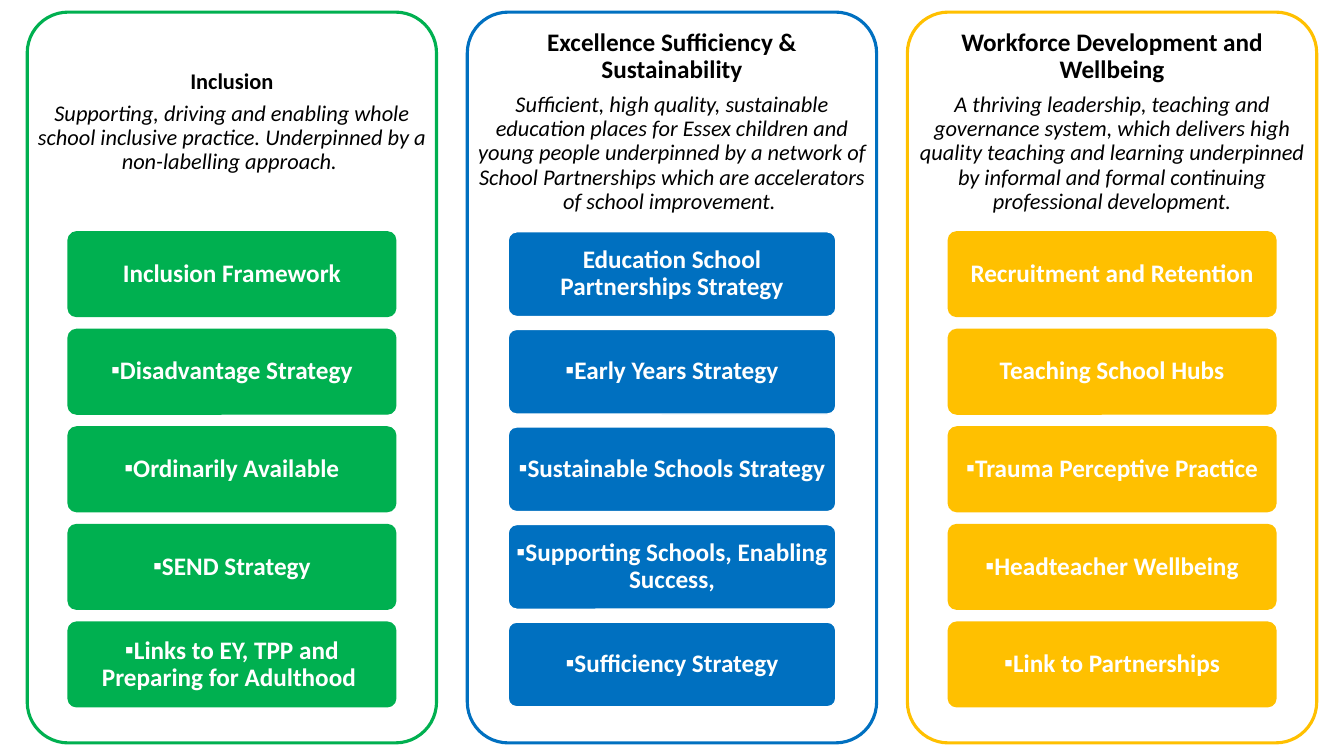
"""Builds a slide of three strategy pillars, each with a heading and five boxes."""
from pptx import Presentation
from pptx.util import Inches, Pt
from pptx.dml.color import RGBColor
from pptx.enum.shapes import MSO_SHAPE as Shape
from pptx.enum.text import MSO_ANCHOR as Anchor, PP_ALIGN as Align
from lxml.etree import SubElement
from pptx.oxml.ns import qn


def add_card(left, top, width, height, fill, line, weight):
    card = slide.shapes.add_shape(Shape.ROUNDED_RECTANGLE, Inches(left), Inches(top),
                                  Inches(width), Inches(height))
    card.adjustments[0] = 0.1
    card.shadow.inherit = False
    card.fill.solid()
    card.fill.fore_color.rgb = RGBColor.from_string(fill)
    card.line.color.rgb = RGBColor.from_string(line)
    card.line.width = Pt(weight)
    return card


def set_text(shape, lines, sizes, color, side, edge):
    frame = shape.text_frame
    frame.text = "\n".join(lines)
    frame.word_wrap = True
    frame.vertical_anchor = Anchor.MIDDLE
    frame.margin_left = frame.margin_right = Inches(side)
    frame.margin_top = frame.margin_bottom = Inches(edge)
    for row, (para, size) in enumerate(zip(frame.paragraphs, sizes)):
        para.alignment = Align.CENTER
        para.line_spacing = 0.9
        para.space_after = Pt(0.35 * size)
        font = para.runs[0].font
        font.name = "Calibri"
        font.size = Pt(size)
        font.bold = row == 0
        font.italic = row > 0
        font.color.rgb = RGBColor.from_string(color)


pillars = [
    ("00B050", "00B050", "Inclusion", 16,
     "Supporting, driving and enabling whole school inclusive practice. "
     "Underpinned by a non-labelling approach. ",
     ["Inclusion Framework", "Disadvantage Strategy", "Ordinarily Available",
      "SEND Strategy", "Links to EY, TPP and Preparing for Adulthood "], 1),
    ("0070C0", "FFFFFF", "Excellence Sufficiency & Sustainability", 18,
     "Sufficient, high quality, sustainable education places for Essex children "
     "and young people underpinned by a network of School Partnerships which are "
     "accelerators of school improvement. ",
     ["Education School Partnerships Strategy", "Early Years Strategy",
      "Sustainable Schools Strategy", "Supporting Schools, Enabling Success,",
      "Sufficiency Strategy"], 1),
    ("FFC000", "FFC000", "Workforce Development and Wellbeing", 18,
     "A thriving leadership, teaching and governance system, which delivers high "
     "quality teaching and learning underpinned by informal and formal continuing "
     "professional development.",
     ["Recruitment and Retention", "Teaching School Hubs", "Trauma Perceptive Practice",
      "Headteacher Wellbeing", "Link to Partnerships"], 2),
]

deck = Presentation()
deck.slide_width, deck.slide_height = Inches(13.33), Inches(7.5)
slide = deck.slides.add_slide(deck.slide_layouts[6])

for col, (color, border, title, size, intro, items, plain) in enumerate(pillars):
    left = 0.27 + col * 4.365
    add_card(left, 0.12, 4.06, 7.25, "FFFFFF", color, 2.25)
    head = slide.shapes.add_textbox(Inches(left), Inches(0.12), Inches(4.06), Inches(2.18))
    set_text(head, [title, intro], [size, 16], "000000", 0.07, 0.07)
    for row, item in enumerate(items):
        box = add_card(left + 0.405, 2.3 + row * 0.968, 3.25, 0.84, color, border, 1)
        set_text(box, [item], [18], "FFFFFF", 0.05, 0.04)
        if row >= plain:
            props = box.text_frame.paragraphs[0]._p.get_or_add_pPr()
            props.set("marL", "0")
            props.set("indent", "0")
            SubElement(props, qn("a:buFont"), typeface="Arial")
            SubElement(props, qn("a:buChar"), char="▪")

deck.save("out.pptx")
